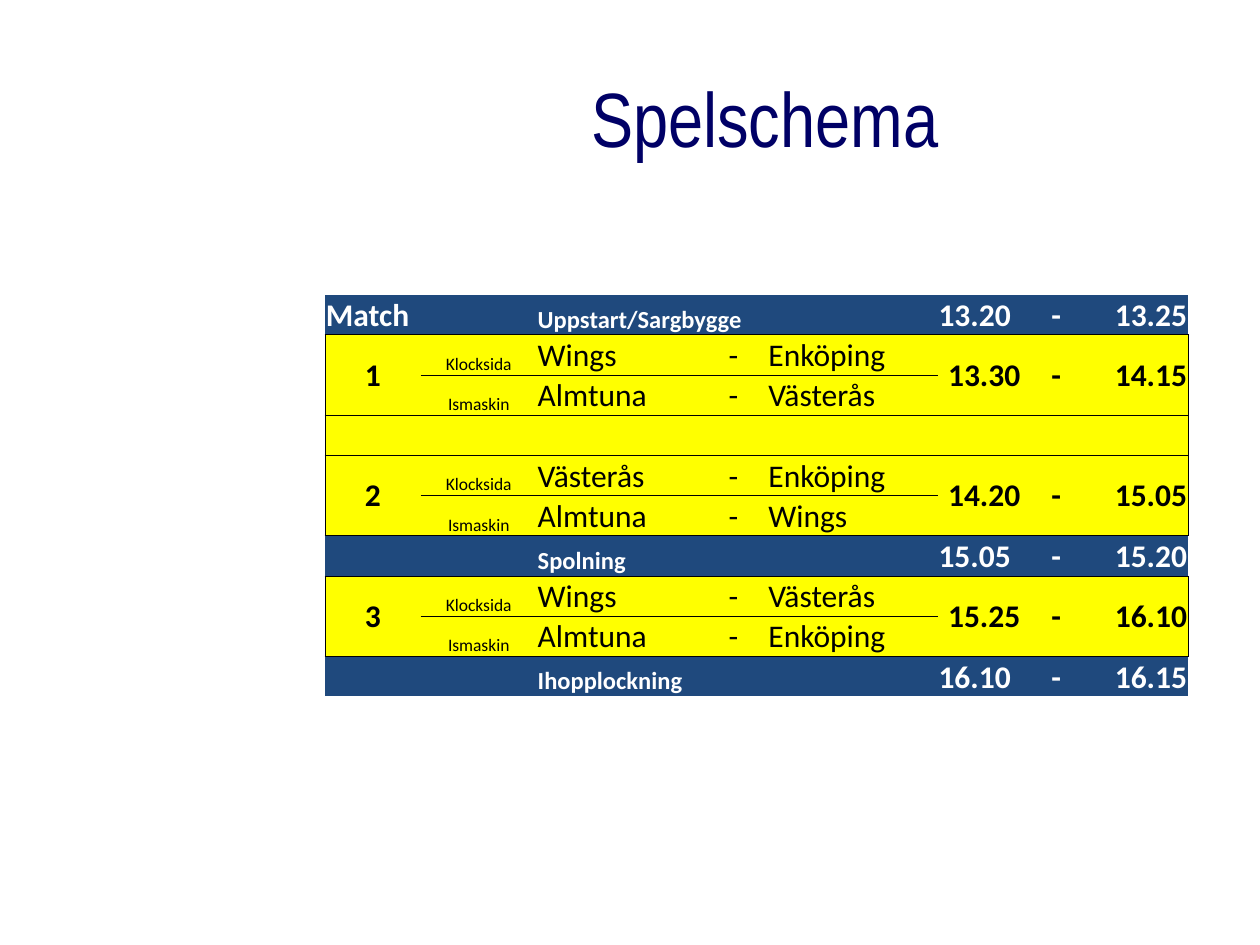
import pptx
import pptx.util
import pptx.dml.color
import pptx.enum.text
import pptx.oxml
import pptx.oxml.ns

Cm = pptx.util.Cm
Pt = pptx.util.Pt
ALIGN = pptx.enum.text.PP_ALIGN
ANCHOR = pptx.enum.text.MSO_ANCHOR

BLUE, YELLOW, WHITE, BLACK, NAVY = "1F497D", "FFFF00", "FFFFFF", "000000", "000066"
NO_STYLE = "{2D5ABB26-0587-4C30-8999-92F81FD0307C}"
COLUMN_WIDTHS = [1.93, 2.34, 3.28, 1.37, 3.28, 0.15, 1.88, 1.02, 2.15]
ROW_HEIGHT = 0.81
RINKS = ["Klocksida", "Ismaskin"]
SCHEDULE = [
    {"heading": "Match", "label": "Uppstart/Sargbygge", "label_span": 3, "times": ("13.20", "13.25")},
    {"match": "1", "games": [("Wings", "Enköping"), ("Almtuna", "Västerås")], "times": ("13.30", "14.15")},
    {},
    {"match": "2", "games": [("Västerås", "Enköping"), ("Almtuna", "Wings")], "times": ("14.20", "15.05")},
    {"label": "Spolning", "label_span": 1, "times": ("15.05", "15.20")},
    {"match": "3", "games": [("Wings", "Västerås"), ("Almtuna", "Enköping")], "times": ("15.25", "16.10")},
    {"label": "Ihopplockning", "label_span": 2, "times": ("16.10", "16.15")},
]


def rgb(value):
    return pptx.dml.color.RGBColor.from_string(value)


def write(frame, text, size=18, color=BLACK, bold=False, align=ALIGN.LEFT, font="Calibri"):
    paragraph = frame.paragraphs[0]
    paragraph.alignment = align
    run = paragraph.add_run()
    run.text = text
    run.font.name = font
    run.font.size = Pt(size)
    run.font.bold = bold
    run.font.color.rgb = rgb(color)


def fill_cell(cell, edges, color):
    properties = cell._tc.get_or_add_tcPr()
    for edge in edges:
        properties.append(pptx.oxml.parse_xml(
            f'<a:ln{edge} {pptx.oxml.ns.nsdecls("a")} w="{Pt(0.5)}"><a:solidFill>'
            f'<a:srgbClr val="{BLACK}"/></a:solidFill></a:ln{edge}>'))
    cell.fill.solid()
    cell.fill.fore_color.rgb = rgb(color)
    cell.margin_left = cell.margin_right = cell.margin_top = Cm(0.02)
    cell.margin_bottom = 0


def fill_block(table, top, bottom, color, outlined):
    last_column = len(COLUMN_WIDTHS) - 1
    for row in range(top, bottom + 1):
        for column in range(last_column + 1):
            cell = table.cell(row, column)
            end_row = row + cell.span_height - 1
            edges = [("L", column == 0), ("R", column == last_column),
                     ("T", row == top), ("B", end_row == bottom)]
            fill_cell(cell, [edge for edge, on in edges if on and outlined], color)
            cell.vertical_anchor = ANCHOR.MIDDLE if cell.is_merge_origin and cell.span_height > 1 else ANCHOR.BOTTOM


def write_times(table, row, times, color, start_align):
    texts = [times[0], "-", times[1]]
    for column, text, align in zip((6, 7, 8), texts, (start_align, ALIGN.CENTER, ALIGN.RIGHT)):
        write(table.cell(row, column).text_frame, text, color=color, bold=True, align=align)


def add_match(table, row, entry):
    for column in (0, 6, 7, 8):
        table.cell(row, column).merge(table.cell(row + 1, column))
    fill_block(table, row, row + 1, YELLOW, True)
    write(table.cell(row, 0).text_frame, entry["match"], bold=True, align=ALIGN.CENTER)
    for offset, (rink, (home, away)) in enumerate(zip(RINKS, entry["games"])):
        cells = [table.cell(row + offset, column).text_frame for column in range(1, 5)]
        write(cells[0], rink, size=10, align=ALIGN.CENTER)
        write(cells[1], home)
        write(cells[2], "-", align=ALIGN.CENTER)
        write(cells[3], away)
    write_times(table, row, entry["times"], BLACK, ALIGN.CENTER)


def add_bar(table, row, entry):
    if "heading" in entry:
        table.cell(row, 0).merge(table.cell(row, 1))
        write(table.cell(row, 0).text_frame, entry["heading"], color=WHITE, bold=True)
    if entry["label_span"] > 1:
        table.cell(row, 2).merge(table.cell(row, 1 + entry["label_span"]))
    fill_block(table, row, row, BLUE, False)
    write(table.cell(row, 2).text_frame, entry["label"], size=14, color=WHITE, bold=True)
    write_times(table, row, entry["times"], WHITE, ALIGN.LEFT)


def add_schedule(slide):
    row_count = sum(len(entry.get("games", [None])) for entry in SCHEDULE)
    shape = slide.shapes.add_table(row_count, len(COLUMN_WIDTHS), Cm(6.55), Cm(5.94),
                                   Cm(sum(COLUMN_WIDTHS)), Cm(ROW_HEIGHT * row_count))
    table = shape.table
    table.first_row = table.horz_banding = False
    table._tbl.tblPr.find(pptx.oxml.ns.qn("a:tableStyleId")).text = NO_STYLE
    for column, width in zip(table.columns, COLUMN_WIDTHS):
        column.width = Cm(width)
    for table_row in table.rows:
        table_row.height = Cm(ROW_HEIGHT)
    row = 0
    for entry in SCHEDULE:
        if "match" in entry:
            add_match(table, row, entry)
        elif "label" in entry:
            add_bar(table, row, entry)
        else:
            fill_block(table, row, row, YELLOW, True)
        row += len(entry.get("games", [None]))


def main():
    presentation = pptx.Presentation()
    presentation.slide_width, presentation.slide_height = Cm(25.4), Cm(19.05)
    slide = presentation.slides.add_slide(presentation.slide_layouts[6])
    add_schedule(slide)
    title = slide.shapes.add_textbox(Cm(6.71), Cm(0.76), Cm(17.42), Cm(3.18))
    title.text_frame.word_wrap = True
    title.text_frame.vertical_anchor = ANCHOR.MIDDLE
    write(title.text_frame, "Spelschema", size=44, color=NAVY, align=ALIGN.CENTER, font="Arial Narrow")
    presentation.save("out.pptx")


if __name__ == "__main__":
    main()
